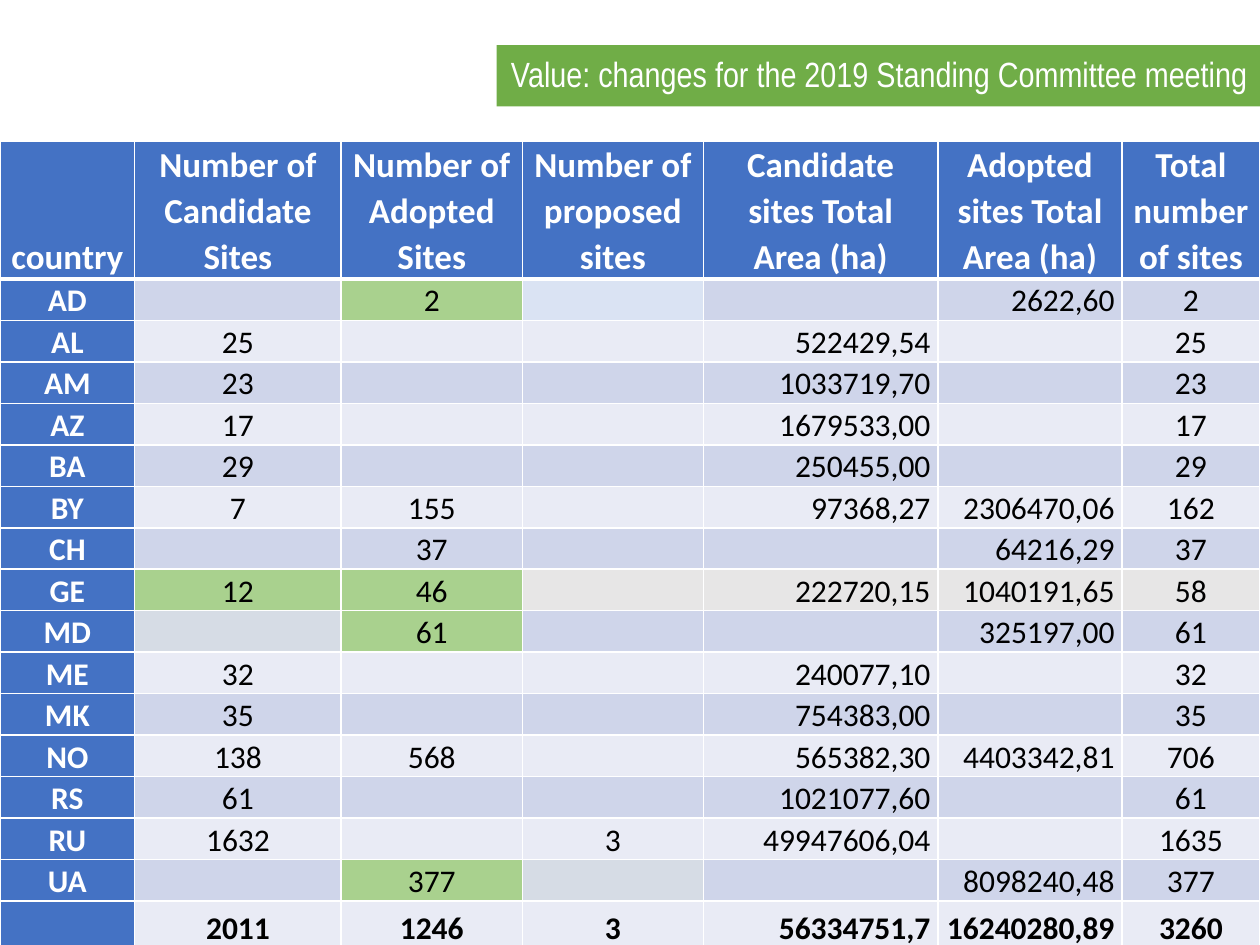
from lxml import etree
from pptx import Presentation
from pptx.dml.color import RGBColor
from pptx.enum.shapes import MSO_SHAPE
from pptx.enum.text import MSO_ANCHOR, PP_ALIGN
from pptx.oxml.ns import qn
from pptx.util import Pt

RECT = MSO_SHAPE.RECTANGLE
CENTER, RIGHT = PP_ALIGN.CENTER, PP_ALIGN.RIGHT
MIDDLE, BOTTOM = MSO_ANCHOR.MIDDLE, MSO_ANCHOR.BOTTOM

HUES = {
    "white": "FFFFFF", "black": "000000", "blue": "4472C4",
    "banner": "70AD47", "green": "A9D18E", "dark": "CFD5EA",
    "light": "E9EBF5", "sky": "DAE3F3", "gray": "E7E6E6", "slate": "D6DCE5",
}

TITLE = "Value: changes for the 2019 Standing Committee meeting"
WIDTHS = [77, 118, 103.5, 103.5, 134, 105.2, 78.8]
HEAD, ROW, LAST = 77, 23.7, 26.6
AREAS = (4, 5)
DATA = """
country|Number of Candidate Sites|Number of Adopted Sites|Number of proposed sites|Candidate sites Total Area (ha)|Adopted sites Total Area (ha)|Total number of sites
AD||2|||2622,60|2
AL|25|||522429,54||25
AM|23|||1033719,70||23
AZ|17|||1679533,00||17
BA|29|||250455,00||29
BY|7|155||97368,27|2306470,06|162
CH||37|||64216,29|37
GE|12|46||222720,15|1040191,65|58
MD||61|||325197,00|61
ME|32|||240077,10||32
MK|35|||754383,00||35
NO|138|568||565382,30|4403342,81|706
RS|61|||1021077,60||61
RU|1632||3|49947606,04||1635
UA||377|||8098240,48|377
|2011|1246|3|56334751,7|16240280,89|3260
"""
ROWS = [line.split("|") for line in DATA.strip().splitlines()]

# Cells that differ from the bands, by country and column
MARKS = {
    "AD": {2: "green", 3: "sky"},
    "GE": {1: "green", 2: "green", 3: "gray", 4: "gray", 5: "gray", 6: "gray"},
    "MD": {1: "slate", 2: "green"},
    "UA": {2: "green", 3: "slate"},
}


class Deck:
    def __init__(self):
        self.file = Presentation()
        self.file.slide_width, self.file.slide_height = Pt(720), Pt(540)
        self.slide = self.file.slides.add_slide(self.file.slide_layouts[6])

    def hue(self, name):
        return RGBColor.from_string(HUES[name])

    def paint(self, item, name):
        item.fill.solid()
        item.fill.fore_color.rgb = self.hue(name)

    def label(self, para, text, align, gap, color, **form):
        para.alignment, para.line_spacing = align, gap
        if text:
            run = para.add_run()
            run.text = text
            run.font.color.rgb = self.hue(color)
            for key, value in form.items():
                setattr(run.font, key, value)

    def banner(self, text, left, top, width, height):
        box = self.slide.shapes.add_shape(
            RECT, Pt(left), Pt(top), Pt(width), Pt(height))
        box.shadow.inherit = False
        box.line.fill.background()
        self.paint(box, "banner")
        frame = box.text_frame
        frame.word_wrap, frame.vertical_anchor = True, MIDDLE
        self.label(frame.paragraphs[0], text, RIGHT, 0.9, "white",
                   name="Arial Narrow", size=Pt(20))

    def edges(self, cell, base):
        """Draw white borders; must come before the cell's fill."""
        props = cell._tc.get_or_add_tcPr()
        for side, width in zip("LRTB", (1, 1, 1, base)):
            line = etree.SubElement(props, qn(f"a:ln{side}"), w=str(Pt(width)))
            fill = etree.SubElement(line, qn("a:solidFill"))
            etree.SubElement(fill, qn("a:srgbClr"), val=HUES["white"])

    def cell(self, cell, text, fill, base, align, color, **form):
        sides = {"margin_left": 4.2, "margin_right": 4.2,
                 "margin_top": 0, "margin_bottom": 0}
        for key, value in sides.items():
            setattr(cell, key, Pt(value))
        cell.vertical_anchor = BOTTOM
        self.edges(cell, base)
        self.paint(cell, fill)
        self.label(cell.text_frame.paragraphs[0], text, align, 1.07, color,
                   name="Calibri", **form)

    def table(self, rows, left, top):
        last = len(rows) - 1
        highs = [HEAD] + [ROW] * (last - 1) + [LAST]
        grid = self.slide.shapes.add_table(
            len(rows), len(WIDTHS), Pt(left), Pt(top),
            Pt(sum(WIDTHS)), Pt(sum(highs))).table
        for col, width in zip(grid.columns, WIDTHS):
            col.width = Pt(width)
        for r, (row, high) in enumerate(zip(rows, highs)):
            grid.rows[r].height = Pt(high)
            band = "dark" if r % 2 else "light"
            for c, text in enumerate(row):
                head = r == 0 or c == 0
                fill = "blue" if head else MARKS.get(row[0], {}).get(c, band)
                self.cell(
                    grid.cell(r, c), text, fill,
                    base=3 if r == 0 else 1,
                    align=RIGHT if r and c in AREAS else CENTER,
                    color="white" if head else "black",
                    size=Pt(18 if r else 20), bold=head or r == last)


def main():
    deck = Deck()
    deck.table(ROWS, 0, 80.8)
    deck.banner(TITLE, 283.8, 25.8, 436.2, 35)
    deck.file.save("out.pptx")


if __name__ == "__main__":
    main()
